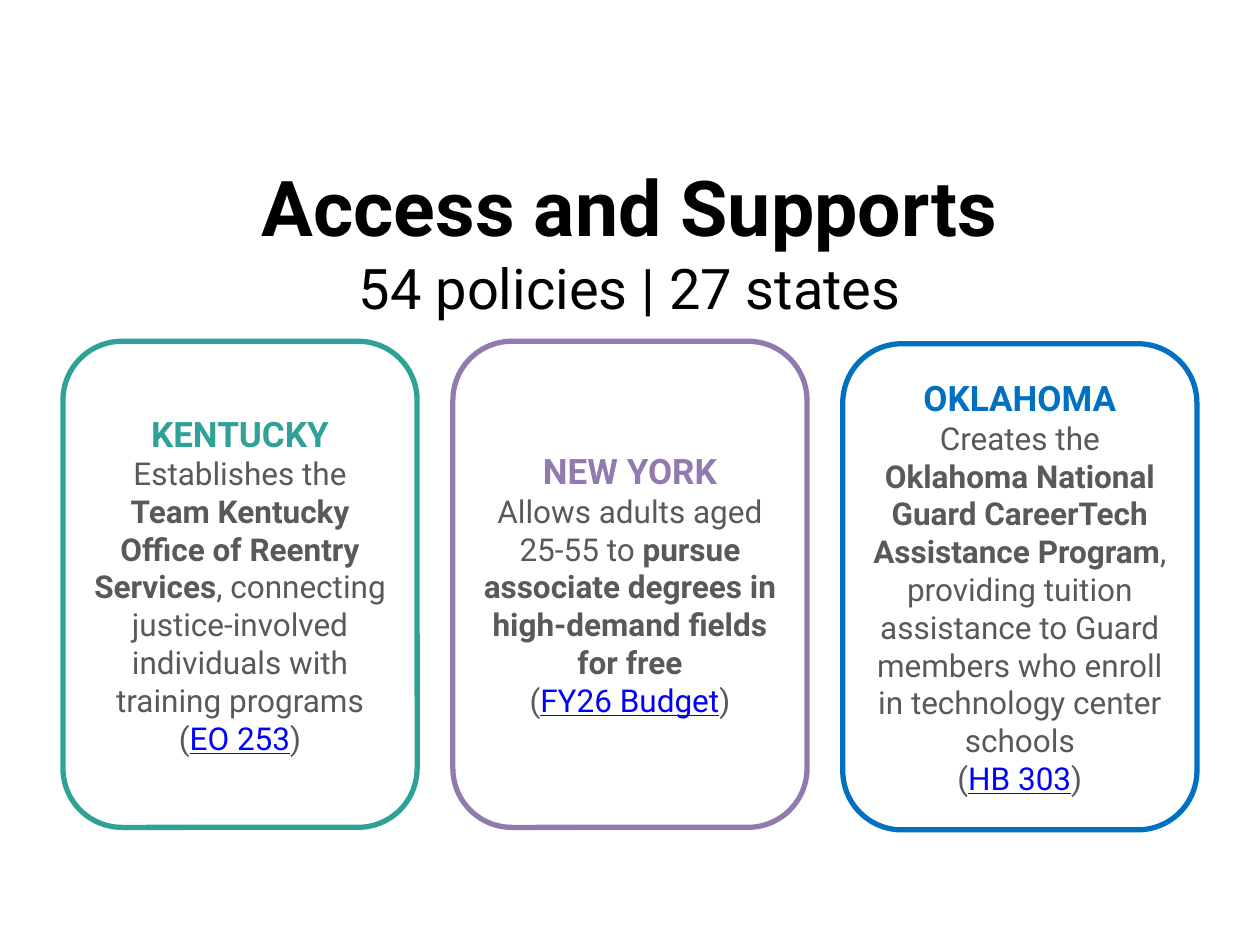
from pptx import Presentation
from pptx.dml.color import RGBColor
from pptx.enum.shapes import MSO_SHAPE as Shape
from pptx.enum.text import MSO_ANCHOR as Anchor, PP_ALIGN as Align
from pptx.util import Cm, Pt

BLACK = RGBColor(0x00, 0x00, 0x00)
WHITE = RGBColor(0xFF, 0xFF, 0xFF)
GRAY = RGBColor(0x58, 0x59, 0x5B)
LINK_BLUE = RGBColor(0x00, 0x00, 0xFF)
TEAL = RGBColor(0x2F, 0xA1, 0x96)
PURPLE = RGBColor(0x92, 0x7A, 0xAE)
BLUE = RGBColor(0x00, 0x70, 0xC0)
FONT = "Roboto"

# Content: text, top, height, size, bold, anchor
HEADINGS = [
    ("Access and Supports", 2.74, 2.82, 44, True, Anchor.MIDDLE),
    ("54 policies | 27 states", 4.99, 1.65, 32, False, Anchor.TOP),
]
# State, colour, top, plain start, bold middle, plain end, source
CARDS = [
    ("KENTUCKY", TEAL, 6.88, "Establishes the ",
     "Team Kentucky Office of Reentry Services",
     ", connecting justice-involved individuals with training programs",
     "EO 253"),
    ("NEW YORK", PURPLE, 6.88, "Allows adults aged 25-55 to ",
     "pursue associate degrees in high-demand fields for free",
     "", "FY26 Budget"),
    ("OKLAHOMA", BLUE, 6.93, "Creates the ",
     "Oklahoma National Guard CareerTech Assistance Program",
     ", providing tuition assistance to Guard members who enroll "
     "in technology center schools",
     "HB 303"),
]

# Layout in centimetres
SLIDE_WIDTH, SLIDE_HEIGHT = 25.4, 19.05
MARGIN = 1.27
CONTENT_WIDTH = SLIDE_WIDTH - 2 * MARGIN
CARD_WIDTH, CARD_HEIGHT = 7.14, 9.8
CARD_STEP = (CONTENT_WIDTH - CARD_WIDTH) / (len(CARDS) - 1)


def add_run(paragraph, text, size, color, bold=False, underline=False):
    run = paragraph.add_run()
    run.text = text
    font = run.font
    font.name, font.size = FONT, Pt(size)
    font.bold, font.underline = bold, underline
    font.color.rgb = color


def add_heading(slide, text, top, height, size, bold, anchor):
    box = slide.shapes.add_textbox(
        Cm(MARGIN), Cm(top), Cm(CONTENT_WIDTH), Cm(height))
    frame = box.text_frame
    frame.word_wrap = True
    frame.vertical_anchor = anchor
    paragraph = frame.paragraphs[0]
    paragraph.alignment = Align.CENTER
    add_run(paragraph, text, size, BLACK, bold)


def add_card(slide, left, state, color, top, start, middle, end, source):
    card = slide.shapes.add_shape(
        Shape.ROUNDED_RECTANGLE,
        Cm(left), Cm(top), Cm(CARD_WIDTH), Cm(CARD_HEIGHT))
    card.shadow.inherit = False
    card.fill.solid()
    card.fill.fore_color.rgb = WHITE
    card.line.color.rgb = color
    card.line.width = Pt(3)

    frame = card.text_frame
    frame.word_wrap = True
    frame.vertical_anchor = Anchor.MIDDLE
    paragraphs = [
        [(state, 20, color, True)],
        [(start, 18, GRAY), (middle, 18, GRAY, True), (end, 18, GRAY)],
        [("(", 18, GRAY), (source, 18, LINK_BLUE, False, True),
         (")", 18, GRAY)],
    ]
    for index, runs in enumerate(paragraphs):
        paragraph = frame.add_paragraph() if index else frame.paragraphs[0]
        paragraph.alignment = Align.CENTER
        for run in runs:
            if run[0]:
                add_run(paragraph, *run)


def main():
    presentation = Presentation()
    presentation.slide_width = Cm(SLIDE_WIDTH)
    presentation.slide_height = Cm(SLIDE_HEIGHT)
    slide = presentation.slides.add_slide(presentation.slide_layouts[6])

    # Title and subtitle
    for heading in HEADINGS:
        add_heading(slide, *heading)

    # One card per state
    for column, card in enumerate(CARDS):
        add_card(slide, MARGIN + column * CARD_STEP, *card)

    presentation.save("out.pptx")


if __name__ == "__main__":
    main()
